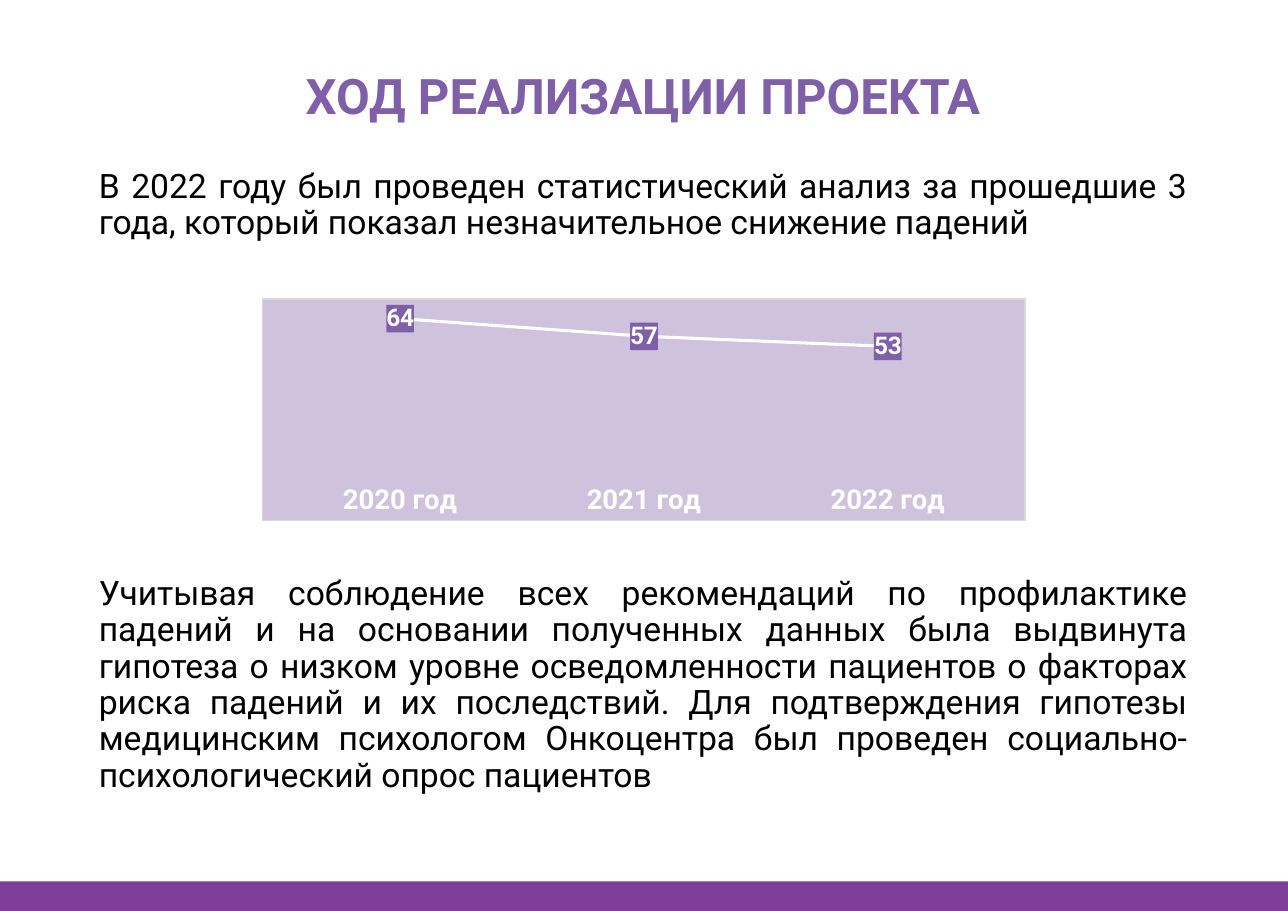
from dataclasses import dataclass

from lxml.etree import fromstring
from pptx import Presentation
from pptx.chart.data import CategoryChartData
from pptx.dml.color import RGBColor
from pptx.enum.chart import XL_CHART_TYPE, XL_LABEL_POSITION, XL_MARKER_STYLE, XL_TICK_MARK
from pptx.enum.shapes import MSO_SHAPE
from pptx.enum.text import MSO_ANCHOR, PP_ALIGN
from pptx.oxml.ns import qn
from pptx.util import Cm, Pt


@dataclass(frozen=True)
class Theme:
    face: str = "Roboto"
    base: str = "Calibri"
    violet: str = "7F5FA8"
    band: str = "7F3F98"
    ink: str = "000000"
    white: str = "FFFFFF"
    edge: str = "D9D9D9"
    title: int = 32
    body: int = 22
    axis: int = 18
    label: int = 16
    small: int = 10


THEME = Theme()
WIDTH, HEIGHT = 29.7, 21
LEFT, SPAN = 2.03, 25.6
SPACES = (
    'xmlns:c="http://schemas.openxmlformats.org/drawingml/2006/chart" '
    'xmlns:a="http://schemas.openxmlformats.org/drawingml/2006/main"'
)
INTRO = "В 2022 году был проведен статистический анализ за прошедшие 3 года, который показал незначительное снижение падений"
SUMMARY = (
    "Учитывая соблюдение всех рекомендаций по профилактике падений и на основании "
    "полученных данных была выдвинута гипотеза о низком уровне осведомленности "
    "пациентов о факторах риска падений и их последствий. Для подтверждения гипотезы "
    "медицинским психологом Онкоцентра был проведен социально-психологический опрос пациентов"
)
FALLS = {"2020 год": 64, "2021 год": 57, "2022 год": 53}


def style(font, size, color, bold=False, face=THEME.face):
    font.name = face
    font.size = Pt(size)
    font.bold = bold
    font.color.rgb = RGBColor.from_string(color)


def add_title(slide, box, text):
    title = slide.shapes.title
    title.left, title.top, title.width, title.height = map(Cm, box)
    frame = title.text_frame
    frame.text = text
    frame.vertical_anchor = MSO_ANCHOR.MIDDLE
    line = frame.paragraphs[0]
    line.alignment = PP_ALIGN.CENTER
    style(line.font, THEME.title, THEME.violet, True)


def add_body(slide, box, text):
    frame = slide.shapes.add_textbox(*map(Cm, box)).text_frame
    frame.word_wrap = True
    frame.text = text
    line = frame.paragraphs[0]
    line.alignment = PP_ALIGN.JUSTIFY
    line.line_spacing = 0.9
    style(line.font, THEME.body, THEME.ink)


def fill_xml(color, alpha=100, edge=""):
    line = f'<a:ln w="9525"><a:solidFill><a:srgbClr val="{edge}"/></a:solidFill></a:ln>' if edge else ""
    return fromstring(
        f'<c:spPr {SPACES}><a:solidFill><a:srgbClr val="{color}">'
        f'<a:alpha val="{alpha * 1000}"/></a:srgbClr></a:solidFill>{line}</c:spPr>'
    )


def set_plot(chart, x, y, w, h):
    area = chart._chartSpace.chart.plotArea
    for old in area.findall(qn("c:layout")):
        area.remove(old)
    sizes = "".join(f'<c:{key} val="{val}"/>' for key, val in zip("xywh", (x, y, w, h)))
    area.insert(0, fromstring(
        f'<c:layout {SPACES}><c:manualLayout><c:layoutTarget val="inner"/>'
        f'<c:xMode val="edge"/><c:yMode val="edge"/>{sizes}</c:manualLayout></c:layout>'
    ))


def add_trend(slide, box, falls):
    data = CategoryChartData()
    data.categories = falls.keys()
    data.add_series("Series 1", falls.values())
    chart = slide.shapes.add_chart(XL_CHART_TYPE.LINE, *map(Cm, box), data).chart
    chart.has_legend = False
    chart.has_title = False
    style(chart.font, THEME.small, THEME.ink, face=THEME.base)
    chart._chartSpace.chart.addnext(fill_xml(THEME.violet, 38, THEME.edge))
    set_plot(chart, 0.02, 0.02, 0.96, 0.8)

    scale = chart.value_axis
    scale.minimum_scale, scale.maximum_scale = 0, 70
    scale.has_major_gridlines = False
    scale.visible = False
    years = chart.category_axis
    years.major_tick_mark = XL_TICK_MARK.NONE
    years.format.line.fill.background()
    style(years.tick_labels.font, THEME.axis, THEME.white, True)

    trend = chart.plots[0].series[0]
    trend.smooth = False
    trend.marker.style = XL_MARKER_STYLE.NONE
    trend.format.line.width = Pt(2)
    trend.format.line.color.rgb = RGBColor.from_string(THEME.white)
    labels = trend.data_labels
    labels.show_value = True
    labels.position = XL_LABEL_POSITION.CENTER
    style(labels.font, THEME.label, THEME.white, True)
    labels._element.find(qn("c:txPr")).addprevious(fill_xml(THEME.violet))


def add_band(slide, box):
    band = slide.shapes.add_shape(MSO_SHAPE.RECTANGLE, *map(Cm, box))
    band.shadow.inherit = False
    band.fill.solid()
    band.fill.fore_color.rgb = RGBColor.from_string(THEME.band)
    band.line.fill.background()


def main():
    deck = Presentation()
    deck.slide_width, deck.slide_height = Cm(WIDTH), Cm(HEIGHT)
    slide = deck.slides.add_slide(deck.slide_layouts[5])
    add_title(slide, (LEFT, 1.12, SPAN, 2.13), "ХОД РЕАЛИЗАЦИИ ПРОЕКТА")
    add_body(slide, (LEFT, 3.78, SPAN, 2.57), INTRO)
    add_body(slide, (LEFT, 13.16, SPAN, 5.33), SUMMARY)
    add_trend(slide, (6.05, 6.88, 17.6, 5.13), FALLS)
    add_band(slide, (0, 20.32, WIDTH, HEIGHT - 20.32))
    deck.save("out.pptx")


if __name__ == "__main__":
    main()
